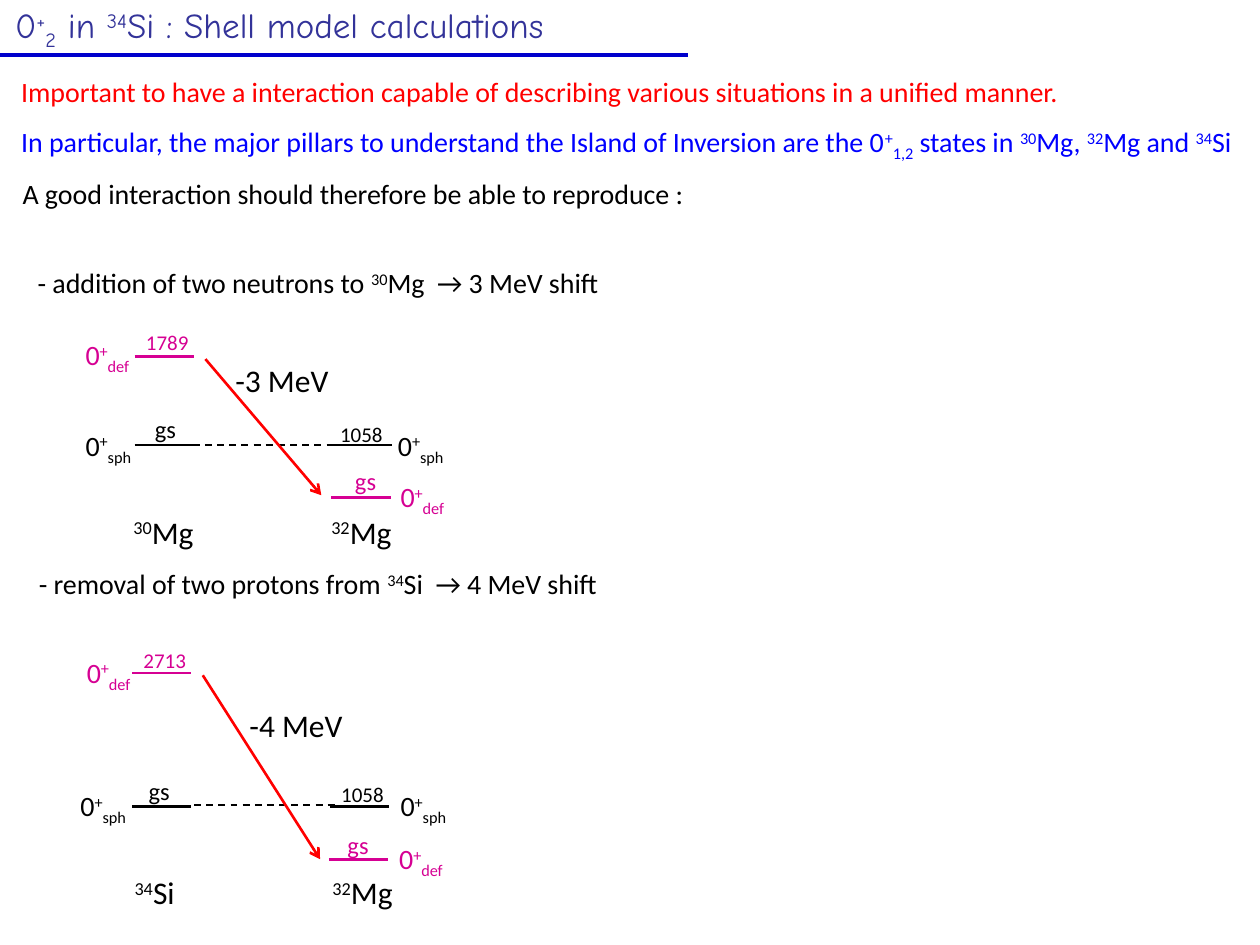
"""Build the slide comparing shell model level shifts for 30Mg, 32Mg and 34Si."""
from dataclasses import dataclass

from lxml import etree
from pptx import Presentation
from pptx.dml.color import RGBColor
from pptx.enum.dml import MSO_LINE
from pptx.enum.shapes import MSO_CONNECTOR
from pptx.enum.text import MSO_ANCHOR, MSO_AUTO_SIZE, PP_ALIGN
from pptx.oxml.ns import qn
from pptx.util import Pt

STRAIGHT = MSO_CONNECTOR.STRAIGHT
DASH = MSO_LINE.DASH
TOP = MSO_ANCHOR.TOP
LEFT = PP_ALIGN.LEFT
FIT_SHAPE = MSO_AUTO_SIZE.SHAPE_TO_FIT_TEXT

BLACK = RGBColor(0x00, 0x00, 0x00)
RED = RGBColor(0xFF, 0x00, 0x00)
BLUE = RGBColor(0x00, 0x00, 0xFF)
RULE_BLUE = RGBColor(0x00, 0x00, 0xCC)
TITLE_BLUE = RGBColor(0x33, 0x33, 0x99)
MAGENTA = RGBColor(0xD6, 0x00, 0x93)

BODY_FONT = "Calibri"
TITLE_FONT = "Comic Neue"
BASELINES = {"^": "30000", "_": "-25000"}
LEVEL_LENGTH = 33.8
STATE_COLORS = {"def": MAGENTA, "sph": BLACK}
STATE_WIDTHS = {"def": 42.5, "sph": 43.9}


@dataclass(frozen=True)
class Label:
    text: str
    left: float
    top: float
    width: float
    size: float = 16
    color: RGBColor = BLACK
    wrap: bool = False


@dataclass(frozen=True)
class Level:
    state: str
    left: float
    y: float
    energy: str
    energy_at: tuple[float, float]
    state_at: tuple[float, float]


@dataclass(frozen=True)
class Diagram:
    levels: tuple[Level, ...]
    labels: tuple[Label, ...]
    guide: tuple[float, float, float, float]
    arrow: tuple[float, float, float, float]


STATEMENTS = (
    Label("Important to have a interaction capable of describing various situations "
          "in a unified manner.", 5, 38.9, 610.6, color=RED),
    Label("In particular, the major pillars to understand the Island of Inversion are "
          "the 0|^+|_1,2| states in |^30|Mg, |^32|Mg and |^34|Si",
          5, 67.7, 717.1, color=BLUE),
    Label("A good interaction should therefore be able to reproduce :", 5.8, 97.2, 393.8),
)

DIAGRAMS = (
    Diagram(
        levels=(
            Level("def", 77, 203.8, "1789", (76.3, 185), (41.8, 189.4)),
            Level("sph", 77, 254.2, "gs", (81.4, 233.3), (41.8, 241.2)),
            Level("sph", 190, 254.2, "1058", (187.2, 237.6), (220.3, 241.2)),
            Level("def", 189.4, 284.4, "gs", (195.8, 262.8), (221.8, 270.7)),
        ),
        labels=(
            Label("- addition of two neutrons to |^30|Mg  → 3 MeV shift",
                  14.4, 148.3, 419.8, wrap=True),
            Label("-3 MeV", 127.4, 203, 68.4, 18),
            Label("^30|Mg", 69.1, 289.4, 51.1, 18),
            Label("^32|Mg", 182.2, 289.4, 51.1, 18),
        ),
        guide=(110.2, 254.2, 192.2, 254.2),
        arrow=(117.4, 205.2, 183.6, 283),
    ),
    Diagram(
        levels=(
            Level("def", 75.6, 384.5, "2713", (74.9, 366.5), (42.5, 370.8)),
            Level("sph", 75.6, 460.8, "gs", (77.8, 439.9), (38.9, 447.1)),
            Level("sph", 188.6, 460.8, "1058", (187.9, 442.8), (221.8, 447.1)),
            Level("def", 187.9, 491, "gs", (191.5, 470.9), (221, 477.4)),
        ),
        labels=(
            Label("- removal of two protons from |^34|Si  → 4 MeV shift",
                  15.1, 320.4, 340.6),
            Label("-4 MeV", 135.4, 399.6, 68.4, 18),
            Label("^34|Si", 69.8, 495.4, 39.6, 18),
            Label("^32|Mg", 182.9, 495.4, 51.1, 18),
        ),
        guide=(110.9, 460.1, 193, 460.1),
        arrow=(115.9, 385.9, 182.9, 491),
    ),
)


def write_text(box, text: str, *, size: float, color: RGBColor,
               font: str = BODY_FONT, wrap: bool = False) -> None:
    frame = box.text_frame
    frame.word_wrap = wrap
    frame.auto_size = FIT_SHAPE
    frame.vertical_anchor = TOP
    para = frame.paragraphs[0]
    para.alignment = LEFT
    for piece in text.split("|"):
        span = para.add_run()
        span.text = piece.lstrip("^_")
        span.font.name = font
        span.font.size = Pt(size)
        span.font.color.rgb = color
        if piece[0] in BASELINES:
            span.font._element.set("baseline", BASELINES[piece[0]])


def draw_label(shapes, label: Label) -> None:
    height = 1.22 * label.size + 7.2
    box = shapes.add_textbox(Pt(label.left), Pt(label.top), Pt(label.width), Pt(height))
    write_text(box, label.text, size=label.size, color=label.color, wrap=label.wrap)


def draw_line(shapes, ends: tuple[float, float, float, float], color: RGBColor, *,
              width: float = 1.5, dashed: bool = False, arrow: bool = False) -> None:
    line = shapes.add_connector(STRAIGHT, *(Pt(value) for value in ends))
    line.line.color.rgb = color
    line.line.width = Pt(width)
    if dashed:
        line.line.dash_style = DASH
    properties = line._element.spPr
    if arrow:
        etree.SubElement(properties.find(qn("a:ln")), qn("a:tailEnd"), type="arrow")
    etree.SubElement(properties, qn("a:effectLst"))


def draw_level(shapes, level: Level) -> None:
    color = STATE_COLORS[level.state]
    draw_line(shapes, (level.left, level.y, level.left + LEVEL_LENGTH, level.y), color)
    width, size = (26.6, 14) if level.energy == "gs" else (39.6, 12)
    draw_label(shapes, Label(level.energy, *level.energy_at, width, size, color))
    draw_label(shapes, Label(f"0|^+|_{level.state}", *level.state_at,
                             STATE_WIDTHS[level.state], color=color))


def draw_diagram(page, diagram: Diagram) -> None:
    shapes = page.shapes.add_group_shape().shapes
    for level in diagram.levels:
        draw_level(shapes, level)
    draw_line(shapes, diagram.guide, BLACK, width=1, dashed=True)
    draw_line(shapes, diagram.arrow, RED, arrow=True)
    for label in diagram.labels:
        draw_label(shapes, label)


def main() -> None:
    deck = Presentation()
    deck.slide_width, deck.slide_height = Pt(720), Pt(540)
    page = deck.slides.add_slide(deck.slide_layouts[5])
    title = page.shapes.title
    title.left, title.top, title.width, title.height = Pt(1.4), Pt(-1.4), Pt(348.5), Pt(31.5)
    write_text(title, "0|^+|_2| in |^34|Si : Shell model calculations",
               size=20, color=TITLE_BLUE, font=TITLE_FONT)
    draw_line(page.shapes, (0, 31.7, 393.1, 31.7), RULE_BLUE, width=2.25)
    for statement in STATEMENTS:
        draw_label(page.shapes, statement)
    for diagram in DIAGRAMS:
        draw_diagram(page, diagram)
    deck.save("out.pptx")


if __name__ == "__main__":
    main()
